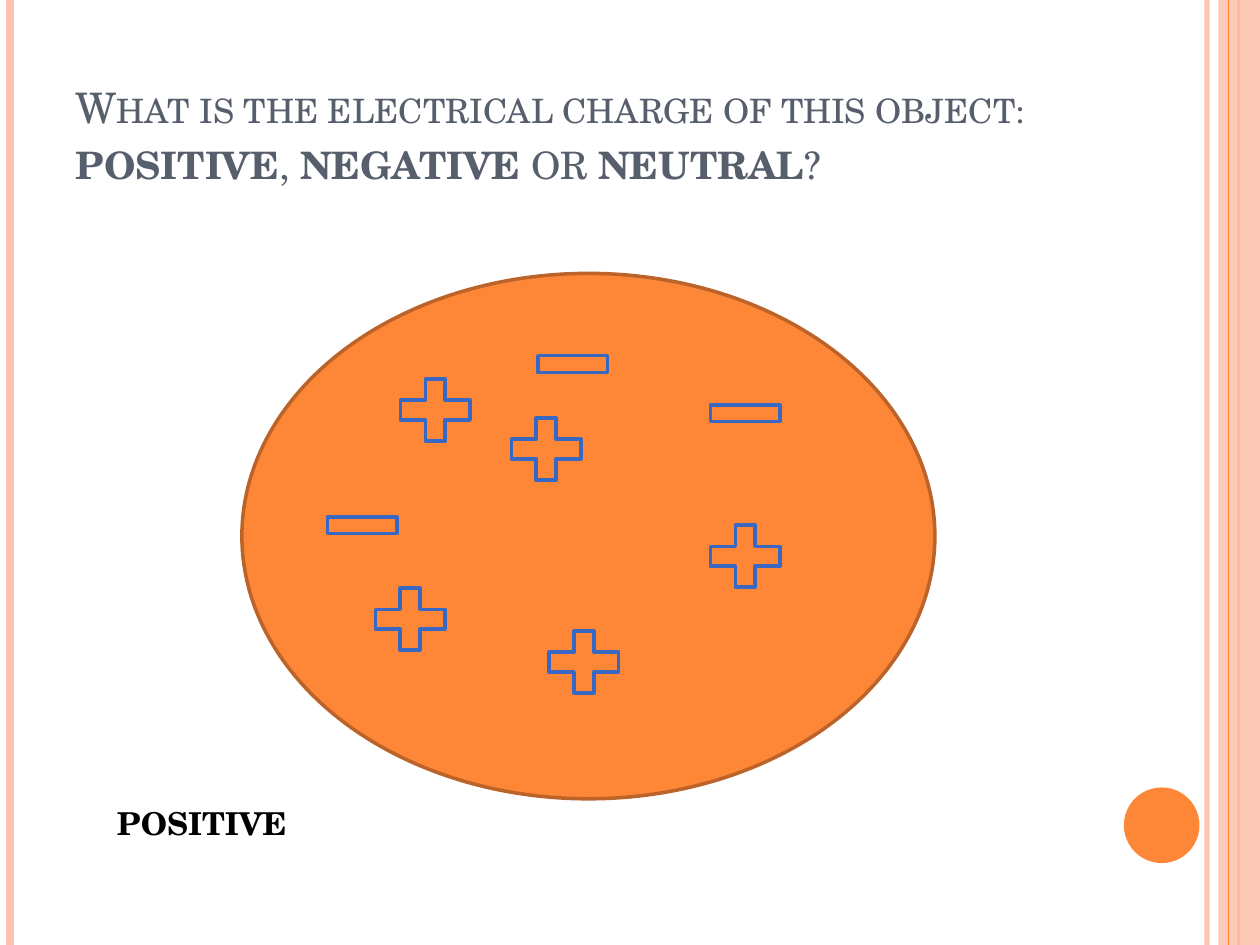
from lxml import etree
from pptx import Presentation
from pptx.dml.color import RGBColor
from pptx.enum.shapes import MSO_CONNECTOR, MSO_SHAPE
from pptx.enum.text import MSO_ANCHOR, MSO_AUTO_SIZE, PP_ALIGN
from pptx.oxml.ns import qn
from pptx.util import Inches, Pt

LINE = MSO_CONNECTOR.STRAIGHT
OVAL, RECTANGLE = MSO_SHAPE.OVAL, MSO_SHAPE.RECTANGLE
PLUS, MINUS = MSO_SHAPE.MATH_PLUS, MSO_SHAPE.MATH_MINUS

ORANGE = RGBColor(0xFE, 0x86, 0x37)
DARK_ORANGE = RGBColor(0xBC, 0x63, 0x29)
PEACH = RGBColor(0xFE, 0xC3, 0xAE)
BLUE = RGBColor(0x36, 0x68, 0xC4)
SLATE = RGBColor(0x57, 0x5F, 0x6D)
BLACK = RGBColor(0, 0, 0)
FONT = "TeX Gyre Schola"

SLIDE_WIDTH, SLIDE_HEIGHT = 10, 7.5

# text, size, bold
TITLE_RUNS = [
    ("What is the electrical charge of this object: ", 24, False),
    ("positive", 27, True),
    (", ", 27, False),
    ("negative", 27, True),
    (" or ", 27, False),
    ("neutral", 27, True),
    ("?", 27, False),
]
ANSWER = "POSITIVE"

# x, colour, width, opacity in percent
LINES_BEHIND_BAND = [(9.58, PEACH, 3, 93), (0.08, PEACH, 4.5, 100), (9.83, ORANGE, 1.5, 100)]
LINE_ON_BAND = (9.75, ORANGE, 0.75, 100)

# symbol, size, top-left corners
CHARGES = [
    (PLUS, (0.75, 0.67), [(3.08, 2.92), (4.26, 4.92), (5.54, 4.08), (2.88, 4.58), (3.96, 3.23)]),
    (MINUS, (0.75, 0.56), [(5.54, 3), (4.17, 2.61), (2.5, 3.89)]),
]


def set_opacity(properties, percent):
    """Make the solid colour inside a shape's or line's properties translucent."""
    color = next(properties.iter(qn("a:srgbClr")))
    etree.SubElement(color, qn("a:alpha"), val=str(percent * 1000))


def add_vertical_line(slide, x, color, width, opacity):
    line = slide.shapes.add_connector(LINE, Inches(x), 0, Inches(x), Inches(SLIDE_HEIGHT))
    line.line.color.rgb = color
    line.line.width = Pt(width)
    properties = line._element.spPr
    if opacity < 100:
        set_opacity(properties, opacity)
    etree.SubElement(properties, qn("a:effectLst"))


def add_filled_shape(slide, kind, box, fill, outline=None):
    shape = slide.shapes.add_shape(kind, *map(Inches, box))
    shape.shadow.inherit = False
    shape.fill.solid()
    shape.fill.fore_color.rgb = fill
    if outline is None:
        shape.line.fill.background()
    else:
        shape.line.color.rgb = outline
        shape.line.width = Pt(2)
    return shape


def add_decoration(slide):
    for line in LINES_BEHIND_BAND:
        add_vertical_line(slide, *line)
    band = add_filled_shape(slide, RECTANGLE, (9.67, 0, 0.33, SLIDE_HEIGHT), PEACH)
    set_opacity(band._element.spPr, 87)
    add_vertical_line(slide, *LINE_ON_BAND)
    add_filled_shape(slide, OVAL, (8.92, 6.25, 0.6, 0.6), ORANGE)


def fill_title(title):
    title.left, title.top, title.width, title.height = map(Inches, (0.5, 0.3, 8.17, 1.25))
    frame = title.text_frame
    frame.auto_size = MSO_AUTO_SIZE.NONE
    frame.vertical_anchor = MSO_ANCHOR.BOTTOM
    paragraph = frame.paragraphs[0]
    paragraph.alignment = PP_ALIGN.LEFT
    for text, size, bold in TITLE_RUNS:
        run = paragraph.add_run()
        run.text = text
        run.font.name = FONT
        run.font.size = Pt(size)
        run.font.bold = bold
        run.font.color.rgb = SLATE
        run._r.get_or_add_rPr().set("cap", "small")


def add_answer(slide):
    frame = slide.shapes.add_textbox(*map(Inches, (0.83, 6.33, 2.62, 0.4))).text_frame
    frame.word_wrap = True
    frame.auto_size = MSO_AUTO_SIZE.SHAPE_TO_FIT_TEXT
    paragraph = frame.paragraphs[0]
    paragraph.text = ANSWER
    paragraph.font.name = FONT
    paragraph.font.size = Pt(18)
    paragraph.font.bold = True
    paragraph.font.color.rgb = BLACK


def main():
    presentation = Presentation()
    presentation.slide_width = Inches(SLIDE_WIDTH)
    presentation.slide_height = Inches(SLIDE_HEIGHT)
    slide = presentation.slides.add_slide(presentation.slide_layouts.get_by_name("Title Only"))

    add_decoration(slide)
    fill_title(slide.shapes.title)
    add_filled_shape(slide, OVAL, (1.92, 2.17, 5.5, 4.17), ORANGE, DARK_ORANGE)
    for symbol, size, corners in CHARGES:
        for corner in corners:
            add_filled_shape(slide, symbol, corner + size, ORANGE, BLUE)
    add_answer(slide)

    presentation.save("out.pptx")


if __name__ == "__main__":
    main()
